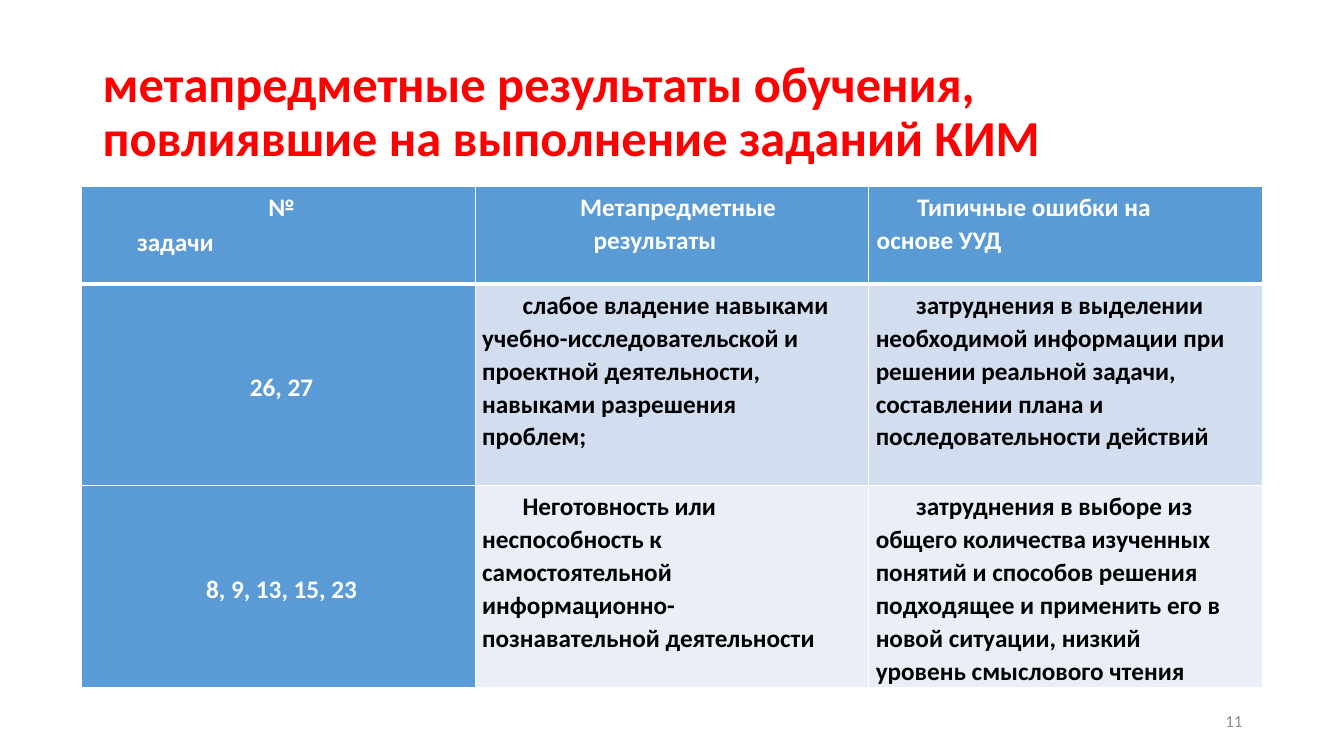
from dataclasses import dataclass

from lxml import etree
from pptx import Presentation
from pptx import util as u
from pptx.dml.color import RGBColor
from pptx.enum import text
from pptx.oxml import ns


@dataclass(frozen=True)
class Theme:
    font: str = "Calibri"
    title_size: int = 36
    table_size: int = 18
    number_size: int = 12
    red: str = "FF0000"
    white: str = "FFFFFF"
    black: str = "000000"
    grey: str = "8C8C8C"
    blue: str = "5B9BD5"
    bands: tuple = ("D2DEEF", "EAEFF7")


theme = Theme()
LEFT, CENTER, RIGHT = text.PP_ALIGN.LEFT, text.PP_ALIGN.CENTER, text.PP_ALIGN.RIGHT
MIDDLE, TOP = text.MSO_ANCHOR.MIDDLE, text.MSO_ANCHOR.TOP


def write(paragraph, words, *, size, color, bold=False, align=LEFT, line_spacing=1.0,
          margins=None):
    """Fill a paragraph; margins is (left, right, first line) in inches."""
    paragraph.alignment = align
    paragraph.line_spacing = line_spacing
    if margins:
        properties = paragraph._p.get_or_add_pPr()
        for name, inches in zip(("marL", "marR", "indent"), margins):
            properties.set(name, str(u.Inches(inches)))
    run = paragraph.add_run()
    run.text = words
    run.font.name = theme.font
    run.font.size = u.Pt(size)
    run.font.bold = bold
    run.font.color.rgb = RGBColor.from_string(color)


def add_border(cell, side, points):
    line = etree.SubElement(cell._tc.get_or_add_tcPr(), ns.qn(f"a:ln{side}"),
                            w=str(u.Pt(points)))
    fill = etree.SubElement(line, ns.qn("a:solidFill"))
    etree.SubElement(fill, ns.qn("a:srgbClr"), val=theme.white)


presentation = Presentation()
presentation.slide_width = u.Inches(13.33)
presentation.slide_height = u.Inches(7.5)
slide = presentation.slides.add_slide(presentation.slide_layouts[6])

# Title and slide number
labels = [
    ((0.92, 0.4, 11.5, 1.45),
     "метапредметные результаты обучения, повлиявшие на выполнение заданий КИМ",
     dict(size=theme.title_size, color=theme.red, bold=True, line_spacing=0.9)),
    ((9.42, 6.95, 3, 0.4), "11",
     dict(size=theme.number_size, color=theme.grey, align=RIGHT)),
]
for place, words, style in labels:
    frame = slide.shapes.add_textbox(*map(u.Inches, place)).text_frame
    frame.word_wrap = True
    frame.vertical_anchor = MIDDLE
    write(frame.paragraphs[0], words, **style)

# Table of results
rows = [
    ["№ \nзадачи", "Метапредметные результаты ", "Типичные ошибки на основе УУД"],
    ["26, 27 ",
     "слабое владение навыками учебно-исследовательской и проектной деятельности, "
     "навыками разрешения проблем;",
     "затруднения в выделении необходимой информации при решении реальной задачи, "
     "составлении плана и последовательности действий"],
    ["8, 9, 13, 15, 23 ",
     "Неготовность или неспособность к самостоятельной "
     "информационно-познавательной деятельности",
     "затруднения в выборе из общего количества изученных понятий и способов решения "
     "подходящее и применить его в новой ситуации, низкий уровень смыслового чтения"],
]
row_heights = [0.97, 2, 2]
table = slide.shapes.add_table(3, 3, u.Inches(0.81), u.Inches(1.85),
                               u.Inches(11.71), u.Inches(sum(row_heights))).table
for row, height in zip(table.rows, row_heights):
    row.height = u.Inches(height)

for r, row in enumerate(rows):
    for c, words in enumerate(row):
        cell = table.cell(r, c)
        is_heading = r == 0 or c == 0
        cell.margin_left, cell.margin_right = u.Inches(0.07), u.Inches(0.08)
        cell.margin_top, cell.margin_bottom = u.Inches(0.04), u.Inches(0)
        cell.vertical_anchor = MIDDLE if c == 0 and r > 0 else TOP
        for side in "LRTB":
            under_header = (r, side) in ((0, "B"), (1, "T"))
            add_border(cell, side, 3 if under_header else 1)
        cell.fill.solid()
        cell.fill.fore_color.rgb = RGBColor.from_string(
            theme.blue if is_heading else theme.bands[r - 1])

        for index, part in enumerate(words.split("\n")):
            frame = cell.text_frame
            paragraph = frame.add_paragraph() if index else frame.paragraphs[0]
            centered = is_heading and c < 2 and index == 0
            left_margin = 0.08 if index else 0.01 if (r, c) == (0, 2) else 0
            write(paragraph, part, size=theme.table_size, bold=True,
                  color=theme.white if is_heading else theme.black,
                  align=CENTER if centered else LEFT, line_spacing=1.07,
                  margins=(left_margin, 0.27, 0.4))
            if (r, c, index) == (0, 0, 0):
                paragraph.space_after = u.Pt(1.1)

presentation.save("out.pptx")
